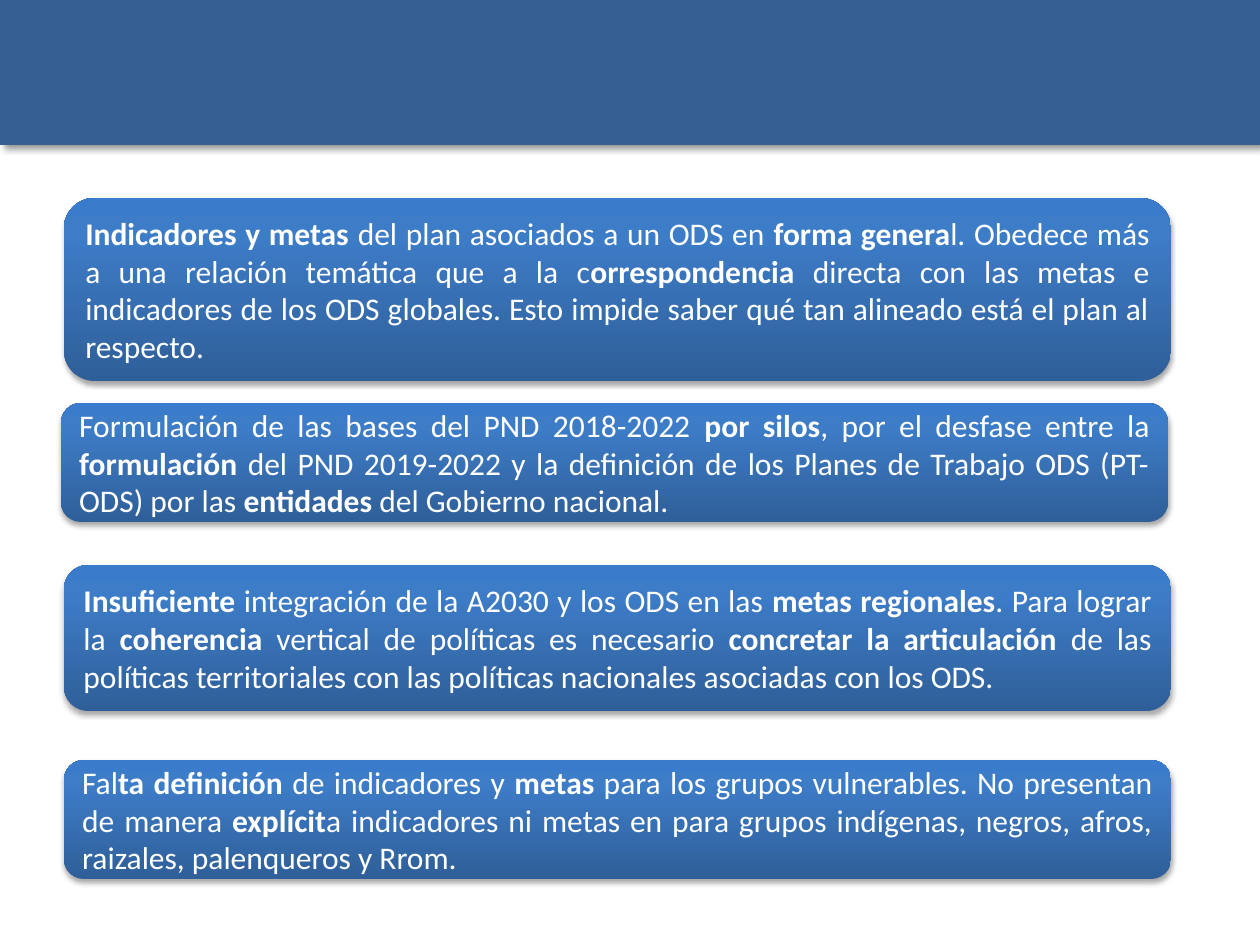
from lxml.etree import SubElement
from pptx import Presentation
from pptx.dml.color import RGBColor
from pptx.enum.shapes import MSO_SHAPE
from pptx.enum.text import MSO_ANCHOR, PP_ALIGN
from pptx.oxml.ns import qn
from pptx.util import Emu, Pt

PX_PER_INCH = 126
SLIDE_WIDTH, SLIDE_HEIGHT = 1260, 945
BAND_HEIGHT = 145
BOX_WIDTH = 1107
BAND_COLOUR, TEXT_COLOUR = "376092", "FFFFFF"
GRADIENT = [(0, "2F5F99"), (80, "3D7CC7"), (100, "3A7CCB")]
# opacity in percent, blur and distance in points, angle in degrees
BAND_SHADOW = (40, 4, 3, 45)
BOX_SHADOW = (35, 3.1, 1.8, 90)

# left, top, height, text with bold parts between double asterisks
FINDINGS = [
    (64, 198, 183,
     "**Indicadores y metas **del plan asociados a un ODS en **forma genera**l. "
     "Obedece más a una relación temática que a la c**orrespondencia **directa "
     "con las metas e indicadores de los ODS globales. Esto impide saber qué tan "
     "alineado está el plan al respecto."),
    (61, 403, 119,
     "Formulación de las bases del PND 2018-2022 **por silos**, por el desfase "
     "entre la **formulación** del PND 2019-2022 y la definición de los Planes de "
     "Trabajo ODS (PT-ODS) por las **entidades **del Gobierno nacional."),
    (64, 565, 146,
     "**Insuficiente** integración de la A2030 y los ODS en las **metas "
     "regionales**. Para lograr la **coherencia** vertical de políticas es "
     "necesario **concretar la articulación **de las políticas territoriales con "
     "las políticas nacionales asociadas con los ODS."),
    (64, 760, 119,
     "Fal**ta definición **de indicadores y **metas** para los grupos "
     "vulnerables. No presentan de manera **explícit**a indicadores ni metas en "
     "para grupos indígenas, negros, afros, raizales, palenqueros y Rrom."),
]


def px(value):
    return Emu(round(value * 914400 / PX_PER_INCH))


def colour(value):
    return RGBColor.from_string(value)


def add_panel(slide, kind, left, top, width, height, shadow):
    """Add a shape without outline that casts the given black shadow."""
    shape = slide.shapes.add_shape(kind, px(left), px(top), px(width), px(height))
    shape.line.fill.background()
    shape.shadow.inherit = False
    opacity, blur, distance, angle = shadow
    effects = shape._element.spPr.find(qn("a:effectLst"))
    outer = SubElement(effects, qn("a:outerShdw"), blurRad=str(Pt(blur)),
                       dist=str(Pt(distance)), dir=str(angle * 60000),
                       rotWithShape="0")
    black = SubElement(outer, qn("a:srgbClr"), val="000000")
    SubElement(black, qn("a:alpha"), val=str(opacity * 1000))
    return shape


def fill_gradient(shape):
    """Fill from the bottom edge upwards with the stops of GRADIENT."""
    shape.fill.gradient()
    shape.fill.gradient_angle = 90
    stops = shape._element.spPr.find(qn("a:gradFill")).find(qn("a:gsLst"))
    for stop in list(stops):
        stops.remove(stop)
    for position, value in GRADIENT:
        stop = SubElement(stops, qn("a:gs"), pos=str(position * 1000))
        SubElement(stop, qn("a:srgbClr"), val=value)


def write_text(shape, text):
    frame = shape.text_frame
    frame.word_wrap = True
    frame.vertical_anchor = MSO_ANCHOR.MIDDLE
    para = frame.paragraphs[0]
    para.alignment = PP_ALIGN.JUSTIFY
    for index, part in enumerate(text.split("**")):
        if part:
            span = para.add_run()
            span.text = part
            span.font.name = "Calibri"
            span.font.size = Pt(18)
            span.font.bold = index % 2 == 1
            span.font.color.rgb = colour(TEXT_COLOUR)


def main():
    deck = Presentation()
    deck.slide_width, deck.slide_height = px(SLIDE_WIDTH), px(SLIDE_HEIGHT)
    slide = deck.slides.add_slide(deck.slide_layouts.get_by_name("Blank"))

    band = add_panel(slide, MSO_SHAPE.RECTANGLE, 0, 0, SLIDE_WIDTH, BAND_HEIGHT,
                     BAND_SHADOW)
    band.fill.solid()
    band.fill.fore_color.rgb = colour(BAND_COLOUR)

    for left, top, height, text in FINDINGS:
        box = add_panel(slide, MSO_SHAPE.ROUNDED_RECTANGLE, left, top, BOX_WIDTH,
                        height, BOX_SHADOW)
        fill_gradient(box)
        write_text(box, text)

    deck.save("out.pptx")


if __name__ == "__main__":
    main()
